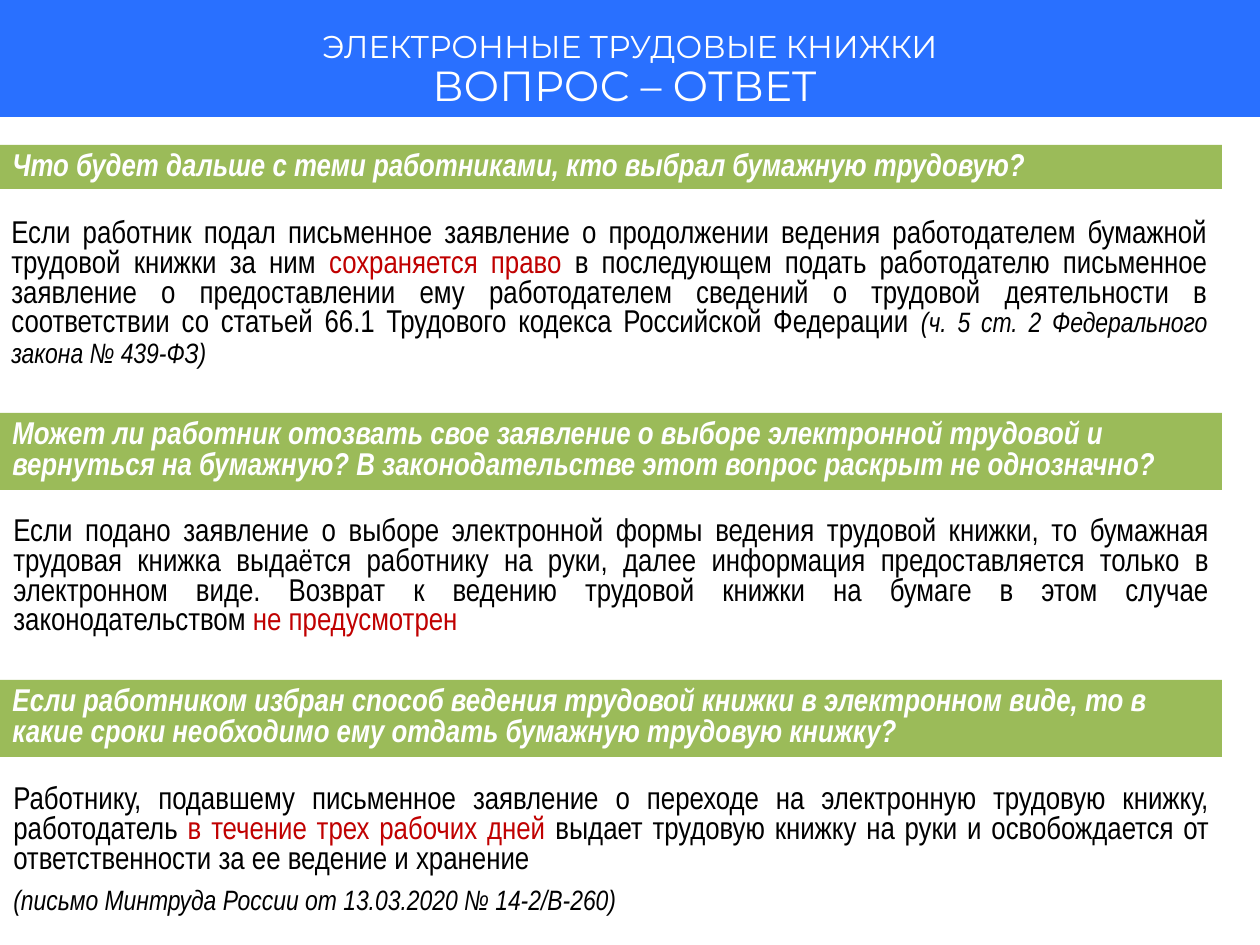
from pptx import Presentation
from pptx.dml.color import RGBColor
from pptx.enum.shapes import MSO_SHAPE
from pptx.enum.text import MSO_ANCHOR, PP_ALIGN
from pptx.util import Pt

EMU_PER_PX = 914400 / 126
RECTANGLE = MSO_SHAPE.RECTANGLE
TOP = MSO_ANCHOR.TOP
LEFT, CENTER, JUSTIFY = PP_ALIGN.LEFT, PP_ALIGN.CENTER, PP_ALIGN.JUSTIFY

WHITE, BLACK, RED = "FFFFFF", "000000", "C00000"
BLUE, GREEN = "2970FF", "9BBB59"
BODY_FONT, TITLE_FONT = "Arial Narrow", "Montserrat"


def add_block(left, top, width, height, fill=None):
    """Add a filled bar, or a plain text box when no fill is given."""
    box = [round(value * EMU_PER_PX) for value in (left, top, width, height)]
    if fill:
        shape = slide.shapes.add_shape(RECTANGLE, *box)
        shape.shadow.inherit = False
        shape.fill.solid()
        shape.fill.fore_color.rgb = RGBColor.from_string(fill)
        shape.line.fill.background()
    else:
        shape = slide.shapes.add_textbox(*box)
    shape.text_frame.word_wrap = True
    shape.text_frame.vertical_anchor = TOP
    return shape.text_frame


def format_paragraph(paragraph, font_name, size, color, alignment, spacing, after=0):
    paragraph.alignment = alignment
    paragraph.line_spacing = Pt(spacing)
    paragraph.space_after = Pt(after)
    paragraph.font.name = font_name
    paragraph.font.size = Pt(size)
    paragraph.font.color.rgb = RGBColor.from_string(color)


presentation = Presentation()
presentation.slide_width = round(1260 * EMU_PER_PX)
presentation.slide_height = round(945 * EMU_PER_PX)
slide = presentation.slides.add_slide(presentation.slide_layouts[6])

# Header
add_block(-1, 0, 1261, 117, BLUE)
title_frame = add_block(0, 13, 1260, 105)
title_frame.text = "ЭЛЕКТРОННЫЕ ТРУДОВЫЕ КНИЖКИ\nВОПРОС – ОТВЕТ "
for paragraph, size in zip(title_frame.paragraphs, (18, 24)):
    format_paragraph(paragraph, TITLE_FONT, size, WHITE, CENTER, 26)

# Question: top, height, text
questions = [
    (145, 44, "Что будет дальше с теми работниками, кто выбрал бумажную трудовую?"),
    (413, 77, "Может ли работник отозвать свое заявление о выборе электронной трудовой "
              "и вернуться на бумажную? В законодательстве этот вопрос раскрыт не однозначно?"),
    (680, 77, "Если работником избран способ ведения трудовой книжки в электронном виде, "
              "то в какие сроки необходимо ему отдать бумажную трудовую книжку?"),
]
for top, height, question in questions:
    frame = add_block(0, top, 1222, height, GREEN)
    frame.text = question
    paragraph = frame.paragraphs[0]
    format_paragraph(paragraph, BODY_FONT, 18, WHITE, LEFT, 18)
    paragraph.font.bold = True
    paragraph.font.italic = True

# Answer: left, top, height, paragraphs made of (style, text) runs
answers = [
    (-1, 214, 163, [[
        ("plain", "Если работник подал письменное заявление о продолжении ведения "
                  "работодателем бумажной трудовой книжки за ним "),
        ("key", "сохраняется право "),
        ("plain", "в последующем подать работодателю письменное заявление о предоставлении "
                  "ему работодателем сведений о трудовой деятельности в соответствии со "
                  "статьей 66.1 Трудового кодекса Российской Федерации "),
        ("source", "(ч. 5 ст. 2 Федерального закона № 439-ФЗ)"),
    ]]),
    (1, 512, 132, [[
        ("plain", "Если подано заявление о выборе электронной формы ведения трудовой книжки, "
                  "то бумажная трудовая книжка выдаётся работнику на руки, далее информация "
                  "предоставляется только в электронном виде. Возврат к ведению трудовой "
                  "книжки на бумаге в этом случае законодательством "),
        ("key", "не предусмотрен"),
    ]]),
    (1, 780, 144, [[
        ("plain", "Работнику, подавшему письменное заявление о переходе на электронную "
                  "трудовую книжку, работодатель "),
        ("key", "в течение трех рабочих дней "),
        ("plain", "выдает трудовую книжку на руки и освобождается от ответственности "
                  "за ее ведение и хранение"),
    ], [
        ("source", "(письмо Минтруда России от 13.03.2020 № 14-2/В-260)"),
    ]]),
]
for left, top, height, paragraphs in answers:
    frame = add_block(left, top, 1221, height)
    for index, runs in enumerate(paragraphs):
        paragraph = frame.add_paragraph() if index else frame.paragraphs[0]
        format_paragraph(paragraph, BODY_FONT, 18, BLACK, JUSTIFY, 17, after=6)
        for style, text in runs:
            run = paragraph.add_run()
            run.text = text
            if style == "key":
                run.font.color.rgb = RGBColor.from_string(RED)
            elif style == "source":
                run.font.size = Pt(16)
                run.font.italic = True

presentation.save("out.pptx")
